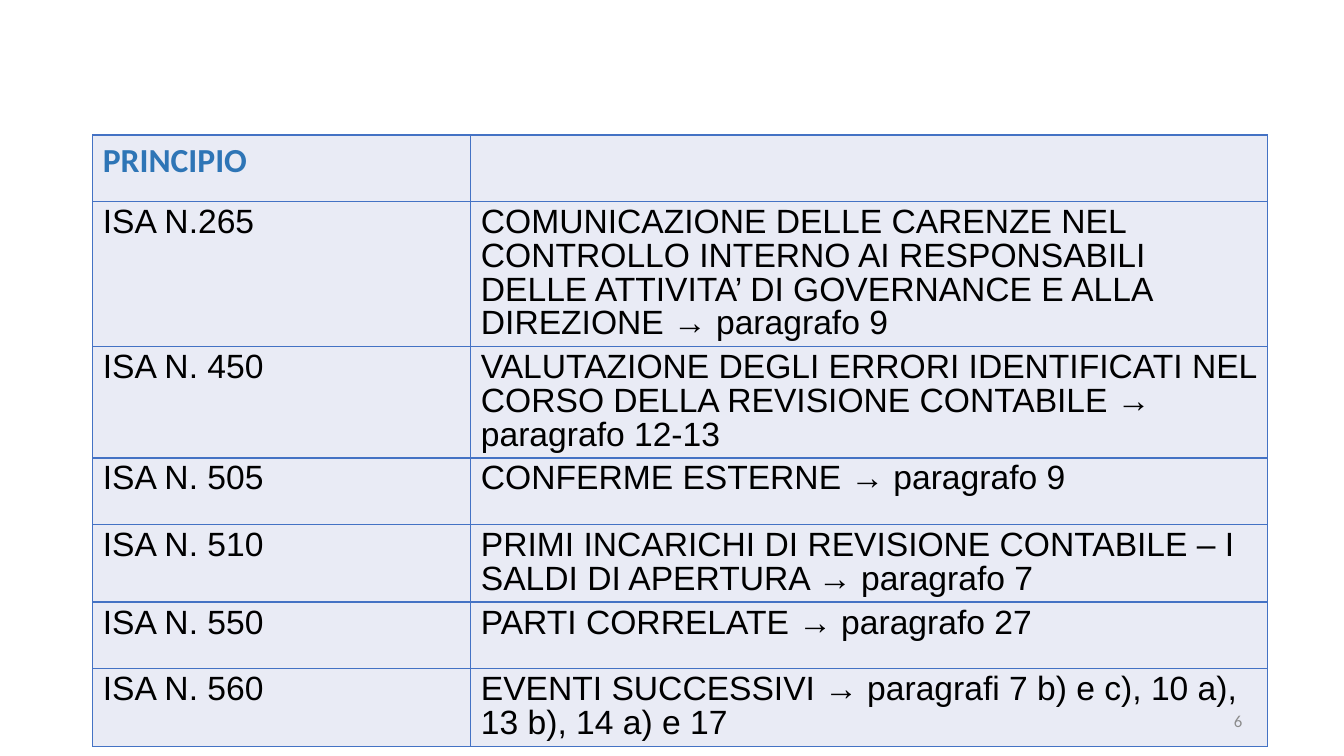
"""Build the slide listing ISA auditing standards and their relevant paragraphs."""

from dataclasses import dataclass

import lxml.etree
import pptx
import pptx.dml.color
import pptx.enum.text
import pptx.oxml.ns
import pptx.slide
import pptx.table
import pptx.text.text
import pptx.util

Inches = pptx.util.Inches


@dataclass(frozen=True)
class TextStyle:
    font: str
    size: int
    color: str
    bold: bool = False


@dataclass(frozen=True)
class Theme:
    header: TextStyle = TextStyle("Calibri", 24, "2E75B6", True)
    body: TextStyle = TextStyle("Arial", 24, "000000")
    page_number: TextStyle = TextStyle("Calibri", 12, "8C8C8C")
    cell_fill: str = "E9EBF5"
    border: str = "4472C4"
    border_width: int = 1
    line_spacing: float = 0.9


@dataclass(frozen=True)
class Standard:
    code: str
    title: str
    reference: str


THEME = Theme()
COLUMN_WIDTHS = (3.75, 7.9)
ROW_HEIGHT = 0.66
STANDARDS = (
    Standard(
        "ISA N.265",
        "COMUNICAZIONE DELLE CARENZE NEL CONTROLLO INTERNO AI RESPONSABILI "
        "DELLE ATTIVITA’ DI GOVERNANCE E ALLA DIREZIONE",
        "paragrafo 9",
    ),
    Standard(
        "ISA N. 450",
        "VALUTAZIONE DEGLI ERRORI IDENTIFICATI NEL CORSO DELLA REVISIONE CONTABILE",
        "paragrafo 12-13",
    ),
    Standard("ISA N. 505", "CONFERME ESTERNE", "paragrafo 9"),
    Standard(
        "ISA N. 510",
        "PRIMI INCARICHI DI REVISIONE CONTABILE – I SALDI DI APERTURA",
        "paragrafo 7",
    ),
    Standard("ISA N. 550", "PARTI CORRELATE", "paragrafo 27"),
    Standard(
        "ISA N. 560",
        "EVENTI SUCCESSIVI",
        "paragrafi 7 b) e c), 10 a), 13 b), 14 a) e 17",
    ),
)


def rgb(color: str) -> pptx.dml.color.RGBColor:
    """Convert a hexadecimal colour."""
    return pptx.dml.color.RGBColor.from_string(color)


def add_run(paragraph: pptx.text.text._Paragraph, text: str, style: TextStyle) -> None:
    """Append a styled run to a paragraph."""
    run = paragraph.add_run()
    run.text = text
    run.font.name = style.font
    run.font.size = pptx.util.Pt(style.size)
    run.font.bold = style.bold
    run.font.color.rgb = rgb(style.color)


def format_cell(cell: pptx.table._Cell) -> None:
    """Give a cell its borders and fill."""
    qualified = pptx.oxml.ns.qn
    properties = cell._tc.get_or_add_tcPr()
    for side in ("a:lnL", "a:lnR", "a:lnT", "a:lnB"):
        width = str(pptx.util.Pt(THEME.border_width))
        line = lxml.etree.SubElement(properties, qualified(side), w=width)
        fill = lxml.etree.SubElement(line, qualified("a:solidFill"))
        lxml.etree.SubElement(fill, qualified("a:srgbClr"), val=THEME.border)
    cell.fill.solid()
    cell.fill.fore_color.rgb = rgb(THEME.cell_fill)


def add_standards_table(slide: pptx.slide.Slide) -> None:
    """Draw the table of standards."""
    row_count = len(STANDARDS) + 1
    table = slide.shapes.add_table(
        row_count,
        len(COLUMN_WIDTHS),
        Inches(0.92),
        Inches(1.34),
        Inches(sum(COLUMN_WIDTHS)),
        Inches(ROW_HEIGHT * row_count),
    ).table
    table.first_row = False
    table.horz_banding = False
    for column, width in zip(table.columns, COLUMN_WIDTHS):
        column.width = Inches(width)
    for row in table.rows:
        row.height = Inches(ROW_HEIGHT)
    for cell in table.iter_cells():
        format_cell(cell)

    add_run(table.cell(0, 0).text_frame.paragraphs[0], "PRINCIPIO", THEME.header)
    for row_index, standard in enumerate(STANDARDS, start=1):
        texts = (standard.code, f"{standard.title} → {standard.reference}")
        for column_index, text in enumerate(texts):
            cell = table.cell(row_index, column_index)
            paragraph = cell.text_frame.paragraphs[0]
            paragraph.line_spacing = THEME.line_spacing
            add_run(paragraph, text, THEME.body)


def add_page_number(slide: pptx.slide.Slide, number: int) -> None:
    """Place the page number at the lower right."""
    box = slide.shapes.add_textbox(Inches(9.42), Inches(6.95), Inches(3), Inches(0.4))
    frame = box.text_frame
    frame.word_wrap = True
    frame.vertical_anchor = pptx.enum.text.MSO_ANCHOR.MIDDLE
    paragraph = frame.paragraphs[0]
    paragraph.alignment = pptx.enum.text.PP_ALIGN.RIGHT
    add_run(paragraph, str(number), THEME.page_number)


def main() -> None:
    """Create and save the presentation."""
    presentation = pptx.Presentation()
    presentation.slide_width = Inches(13.33)
    presentation.slide_height = Inches(7.5)
    slide = presentation.slides.add_slide(presentation.slide_layouts[6])
    add_standards_table(slide)
    add_page_number(slide, 6)
    presentation.save("out.pptx")


if __name__ == "__main__":
    main()
